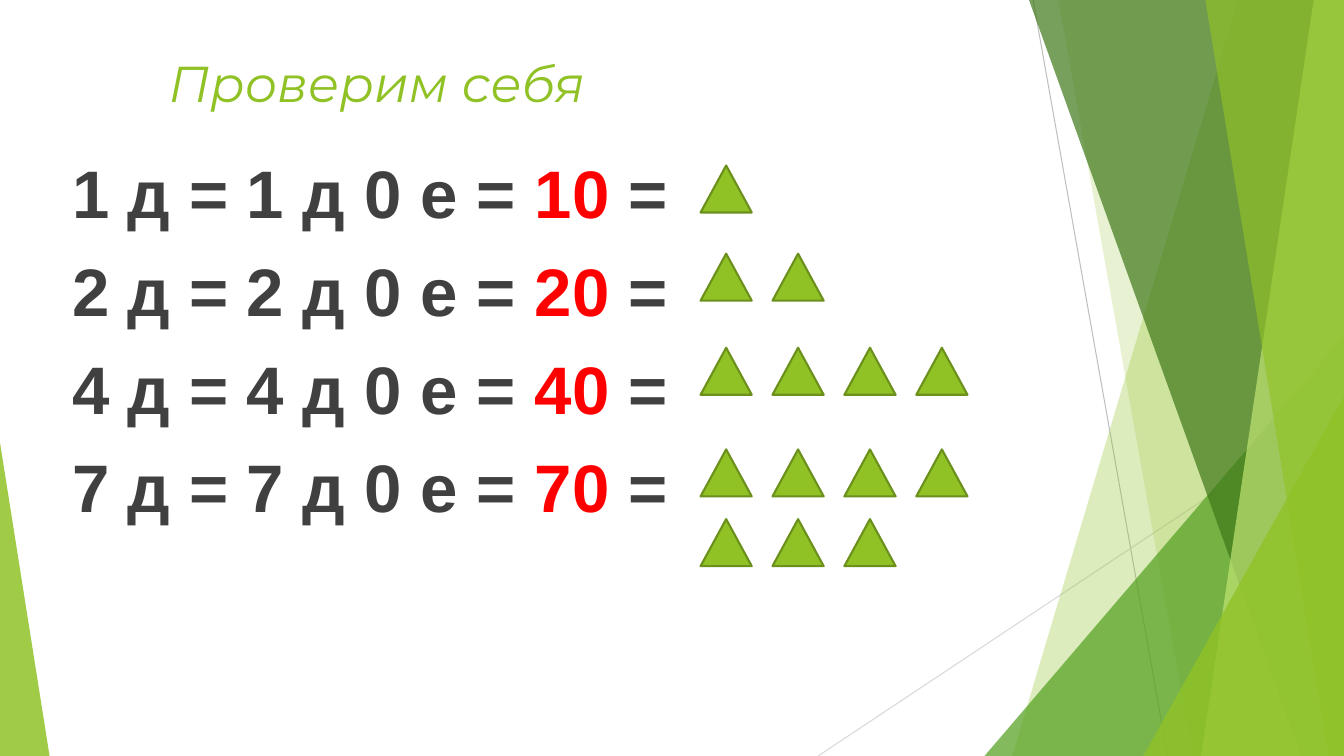
from lxml.etree import SubElement
from pptx import Presentation
from pptx.dml.color import RGBColor
from pptx.enum.shapes import MSO_CONNECTOR, MSO_SHAPE
from pptx.enum.text import MSO_ANCHOR, PP_ALIGN
from pptx.oxml.ns import qn
from pptx.util import Inches, Pt

LIME = RGBColor(0x90, 0xC2, 0x26)
GREEN = RGBColor(0x54, 0xA0, 0x21)
DARK = RGBColor(0x3F, 0x78, 0x19)
PALE = RGBColor(0xC0, 0xE4, 0x74)
OLIVE = RGBColor(0x6B, 0x90, 0x1C)
INK = RGBColor(0x40, 0x40, 0x40)
RED = RGBColor(0xFF, 0x00, 0x00)
GREY = RGBColor(0xBF, 0xBF, 0xBF)
MIST = RGBColor(0xD9, 0xD9, 0xD9)
COLS, ROWS = 80, 45


class Board:
    """Draws the slide's elements on a grid of 80 columns and 45 rows."""

    def __init__(self, deck):
        self.slide = deck.slides.add_slide(deck.slide_layouts[6])
        self.shapes = self.slide.shapes
        self.cell = deck.slide_width / COLS

    def grid(self, *cells):
        return [round(cell * self.cell) for cell in cells]

    def paint(self, shape, color, alpha=100):
        shape.shadow.inherit = False
        shape.fill.solid()
        shape.fill.fore_color.rgb = color
        shape.line.fill.background()
        if alpha < 100:
            tint = next(shape.element.spPr.iter(qn("a:srgbClr")))
            SubElement(tint, qn("a:alpha"), val=str(alpha * 1000))

    def line(self, ends, color):
        line = self.shapes.add_connector(MSO_CONNECTOR.STRAIGHT, *self.grid(*ends))
        line.line.color.rgb = color
        line.line.width = Pt(0.75)
        SubElement(line.element.spPr, qn("a:effectLst"))

    def facet(self, top, base, color, alpha):
        start, *rest = [self.grid(*spot) for spot in
                        ((top, 0), (COLS, 0), (COLS, ROWS), (base, ROWS))]
        pen = self.shapes.build_freeform(*start, scale=1)
        pen.add_line_segments(rest, close=True)
        self.paint(pen.convert_to_shape(), color, alpha)

    def wedge(self, box, tip, color, alpha=100):
        shape = self.shapes.add_shape(MSO_SHAPE.ISOSCELES_TRIANGLE, *self.grid(*box))
        shape.adjustments[0] = tip
        self.paint(shape, color, alpha)
        return shape

    def token(self, col, row):
        shape = self.wedge((col, row, 3.05, 2.8), 0.5, LIME)
        shape.line.color.rgb = OLIVE
        shape.line.width = Pt(1.5)

    def text(self, box):
        frame = self.shapes.add_textbox(*self.grid(*box)).text_frame
        frame.word_wrap = True
        return frame

    def style(self, run, font, size, color):
        run.font.name = font
        run.font.size = Pt(size)
        run.font.color.rgb = color

    def title(self, words, box):
        frame = self.text(box)
        frame.text = words
        frame.vertical_anchor = MSO_ANCHOR.MIDDLE
        para = frame.paragraphs[0]
        para.alignment = PP_ALIGN.CENTER
        self.style(para.runs[0], "Montserrat", 36, LIME)
        para.runs[0].font.italic = True

    def sums(self, tens, box):
        frame = self.text(box)
        frame.margin_top = Inches(0.08)
        for index, ten in enumerate(tens):
            para = frame.add_paragraph() if index else frame.paragraphs[0]
            para.space_before = Pt(10)
            para.line_spacing = 1.04
            parts = ((f"{ten} д = {ten} д 0 е = ", INK), (f"{ten}0", RED), (" =", INK))
            for words, color in parts:
                run = para.add_run()
                run.text = words
                self.style(run, "Arial", 48, color)
                run.font.bold = True


def main():
    deck = Presentation()
    deck.slide_width, deck.slide_height = Inches(13.3333), Inches(7.5)
    board = Board(deck)
    board.line((61.5, 0, 69.5, ROWS), GREY)
    board.line((COLS, 24.2, 48.7, ROWS), MIST)
    board.facet(73.7, 60.25, LIME, 30)
    board.facet(63, 71, LIME, 20)
    board.wedge((58.6, 20, 21.4, 25), 1, GREEN, 72)
    board.facet(61.25, 77.45, DARK, 70)
    board.facet(78.2, 71.5, PALE, 70)
    board.facet(71.75, 79.1, LIME, 65)
    board.wedge((68.05, 23.6, 11.95, 21.4), 1, LIME, 80)
    board.wedge((0, 26.35, 2.95, 18.65), 0, LIME, 85)
    board.title("Проверим себя", (1.6, 2.7, 41.65, 4.45))
    board.sums((1, 2, 4, 7), (3.7, 8.35, 56.4, 31.15))
    for row, count in ((9.85, 1), (15.1, 2), (20.7, 4), (26.75, 4), (30.9, 3)):
        for step in range(count):
            board.token(41.7 + 4.28 * step, row)
    deck.save("out.pptx")


if __name__ == "__main__":
    main()
